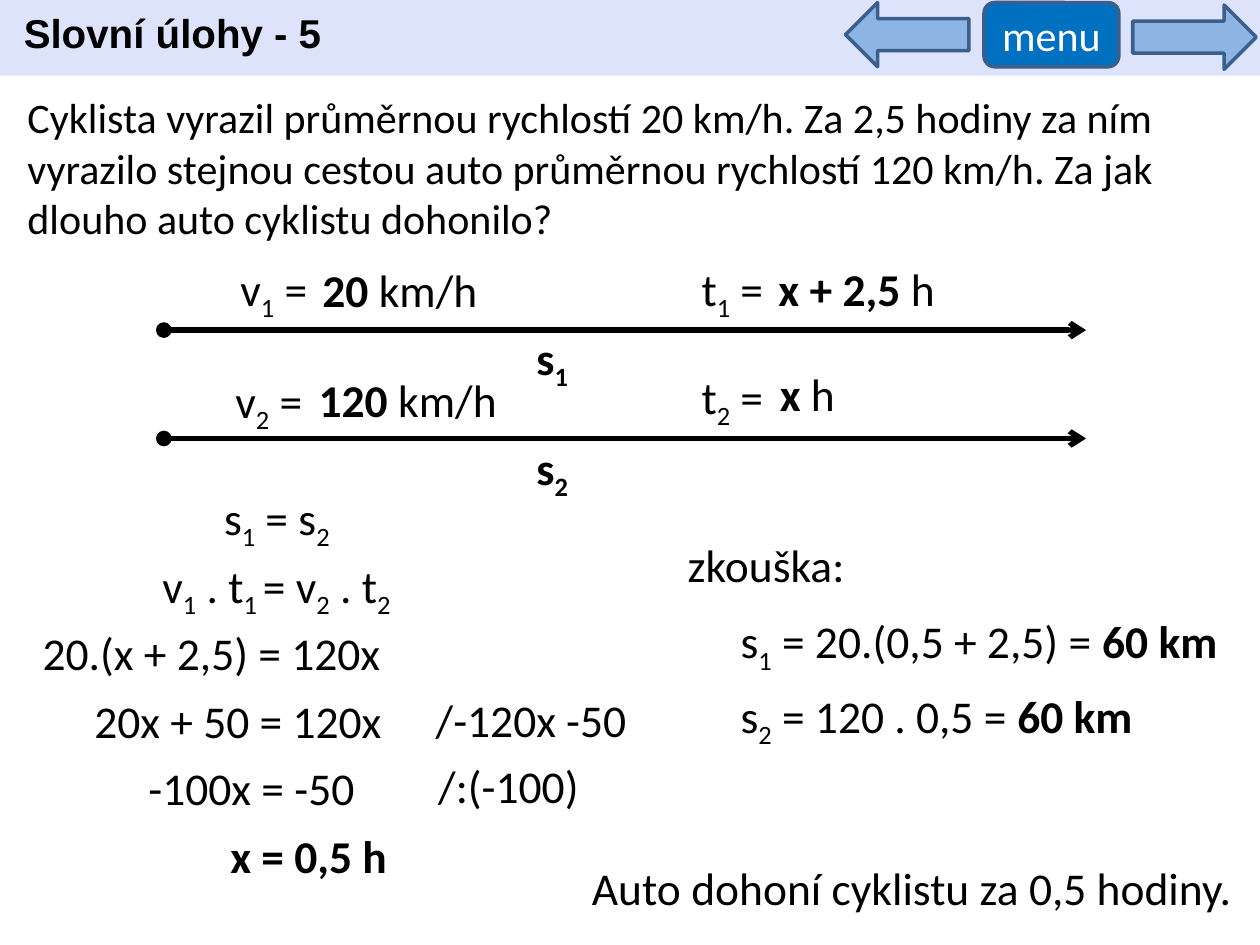
from lxml.etree import SubElement
from pptx import Presentation
from pptx.dml.color import RGBColor
from pptx.enum.shapes import MSO_CONNECTOR, MSO_SHAPE
from pptx.enum.text import MSO_ANCHOR, MSO_AUTO_SIZE, PP_ALIGN
from pptx.oxml.ns import qn
from pptx.util import Inches, Pt


def color(hex_value):
    return RGBColor.from_string(hex_value)


class LessonSlide:
    BLACK, WHITE = "000000", "FFFFFF"
    BAND, ARROW, BUTTON, OUTLINE = "DDE3FB", "8EB4E3", "0070C0", "3A5F8C"
    BODY = {"name": "Calibri", "size": Pt(26), "bold": False}
    LINE_HEIGHT = 0.54

    def __init__(self, presentation):
        self.slide = presentation.slides.add_slide(presentation.slide_layouts[6])

    def fill_text(self, shape, text, text_color=BLACK, align=PP_ALIGN.LEFT, **format_values):
        """Fill a shape with text; *...* is bold and ~...~ is subscript."""
        shape.text_frame.word_wrap = True
        paragraph = shape.text_frame.paragraphs[0]
        paragraph.alignment = align
        for bold_index, part in enumerate(text.split("*")):
            for sub_index, piece in enumerate(part.split("~")):
                if not piece:
                    continue
                run = paragraph.add_run()
                run.text = piece
                values = {**self.BODY, "bold": bold_index % 2 == 1, **format_values}
                for name, value in values.items():
                    setattr(run.font, name, value)
                run.font.color.rgb = color(text_color)
                if sub_index % 2:
                    run._r.get_or_add_rPr().set("baseline", "-25000")

    def text(self, left, top, width, text, height=LINE_HEIGHT, **format_values):
        box = self.slide.shapes.add_textbox(
            Inches(left), Inches(top), Inches(width), Inches(height))
        self.fill_text(box, text, **format_values)
        if height == self.LINE_HEIGHT:
            box.text_frame.auto_size = MSO_AUTO_SIZE.SHAPE_TO_FIT_TEXT

    def shape(self, kind, left, top, width, height, fill, outline=None):
        shape = self.slide.shapes.add_shape(
            kind, Inches(left), Inches(top), Inches(width), Inches(height))
        shape.shadow.inherit = False
        shape.fill.solid()
        shape.fill.fore_color.rgb = color(fill)
        if outline:
            shape.line.color.rgb = color(outline)
            shape.line.width = Pt(2)
        else:
            shape.line.fill.background()
        return shape

    def path_arrow(self, left, right, y):
        """Draw a horizontal route with a dot at its start and an arrow at its end."""
        connector = self.slide.shapes.add_connector(
            MSO_CONNECTOR.STRAIGHT, Inches(left), Inches(y), Inches(right), Inches(y))
        connector.line.color.rgb = color(self.BLACK)
        connector.line.width = Pt(3)
        properties = connector._element.spPr
        outline = properties.find(qn("a:ln"))
        for tag, kind in (("a:headEnd", "oval"), ("a:tailEnd", "arrow")):
            SubElement(outline, qn(tag)).set("type", kind)
        SubElement(properties, qn("a:effectLst"))


def add_header(lesson):
    lesson.shape(MSO_SHAPE.RECTANGLE, 0, -0.03, 10, 0.63, lesson.BAND)
    for kind, left, top in ((MSO_SHAPE.LEFT_ARROW, 6.71, 0.02),
                            (MSO_SHAPE.RIGHT_ARROW, 8.99, 0.04)):
        lesson.shape(kind, left, top, 0.98, 0.51, lesson.ARROW, lesson.OUTLINE)
    lesson.text(0.09, 0.02, 9.32, "*Slovní úlohy - 5*", height=0.5,
                name="Arial", size=Pt(23))
    menu = lesson.shape(MSO_SHAPE.ROUNDED_RECTANGLE, 7.81, 0.02, 1.07, 0.51,
                        lesson.BUTTON, lesson.OUTLINE)
    menu.text_frame.vertical_anchor = MSO_ANCHOR.MIDDLE
    lesson.fill_text(menu, "menu", lesson.WHITE, PP_ALIGN.CENTER, size=Pt(24))


def add_routes(lesson):
    for y in (2.62, 3.48):
        lesson.path_arrow(1.3, 8.62, y)
    for left, top, width, text in (
            (1.81, 2.02, 0.86, "v~1~ ="),
            (2.46, 2.03, 1.66, "*20* km/h"),
            (5.47, 2.02, 0.75, "t~1~ ="),
            (6.08, 2.02, 1.46, "*x + 2,5 *h"),
            (4.16, 2.57, 0.53, "*s~1~*"),
            (1.77, 2.91, 0.86, "v~2~ ="),
            (2.43, 2.9, 1.88, "*120* km/h"),
            (5.47, 2.88, 0.75, "t~2~ ="),
            (6.09, 2.86, 0.82, "*x* h"),
            (4.16, 3.44, 0.53, "*s~2~*")):
        lesson.text(left, top, width, text)


def add_solution(lesson):
    first_top, step = 3.84, 0.535
    for row, (left, width, equation) in enumerate((
            (1.68, 1.28, "s~1~ = s~2~"),
            (1.19, 2.91, "v~1~ . t~1 ~= v~2~ . t~2~"),
            (0.24, 3.28, "20.(x + 2,5) = 120x"),
            (0.65, 3.11, "20x + 50 = 120x"),
            (1.08, 2.06, "-100x = -50"),
            (1.73, 2, "*x = 0,5 h*"))):
        lesson.text(left, round(first_top + row * step, 2), width, equation)
    lesson.text(3.36, 5.44, 2.14, "/-120x -50")
    lesson.text(3.38, 5.97, 1.4, "/:(-100)")


def add_check_and_answer(lesson):
    lesson.text(5.36, 4.21, 1.93, "zkouška:")
    lesson.text(5.78, 4.82, 4.22, "s~1~ = 20.(0,5 + 2,5) = *60 km*")
    lesson.text(5.78, 5.41, 4.06, "s~2~ = 120 . 0,5 = *60 km*")
    answer = lesson.shape(MSO_SHAPE.RECTANGLE, 4.6, 6.78, 5.4, lesson.LINE_HEIGHT,
                          lesson.WHITE)
    answer.text_frame.vertical_anchor = MSO_ANCHOR.TOP
    lesson.fill_text(answer, "Auto dohoní cyklistu za 0,5 hodiny.")


def main():
    presentation = Presentation()
    presentation.slide_width, presentation.slide_height = Inches(10), Inches(7.5)
    lesson = LessonSlide(presentation)
    lesson.text(0.12, 0.68, 9.53,
                "Cyklista vyrazil průměrnou rychlostí 20 km/h. Za 2,5 hodiny za ním "
                "vyrazilo stejnou cestou auto průměrnou rychlostí 120 km/h. Za jak "
                "dlouho auto cyklistu dohonilo?", height=1.31, size=Pt(24))
    add_routes(lesson)
    add_solution(lesson)
    add_check_and_answer(lesson)
    add_header(lesson)
    presentation.save("out.pptx")


if __name__ == "__main__":
    main()
